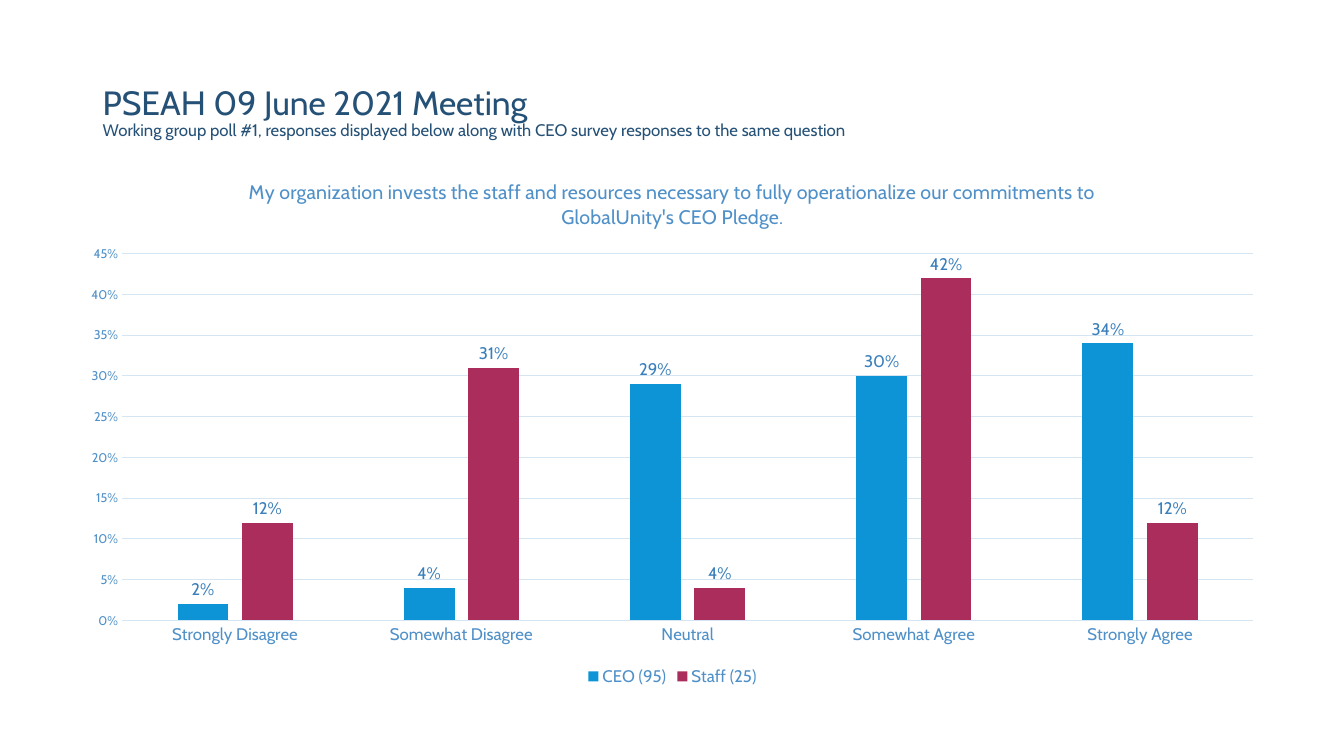
"""Build the poll slide: a heading over a clustered column chart."""
from lxml.etree import Element, SubElement
from pptx import Presentation
from pptx.chart.data import CategoryChartData as Data
from pptx.dml.color import RGBColor as Color
from pptx.enum.chart import XL_CHART_TYPE as Kind
from pptx.enum.chart import XL_LABEL_POSITION as Spot
from pptx.enum.chart import XL_LEGEND_POSITION as Side
from pptx.enum.chart import XL_TICK_MARK as Tick
from pptx.enum.text import MSO_ANCHOR as Anchor
from pptx.oxml.ns import qn
from pptx.util import Pt

PX = 9144
THEME = {
    "face": "Cabin",
    "navy": "255177", "blue": "4F90C8", "label": "3A7FBB", "grid": "D6E5F2",
    "bars": ["0C94D6", "AA2D5C"],
    "head": 24, "title": 14, "body": 12, "base": 10, "tick": 9,
}
CATS = ["Strongly Disagree", "Somewhat Disagree", "Neutral",
        "Somewhat Agree", "Strongly Agree"]
POLL = {
    "CEO (95)": [0.02, 0.04, 0.29, 0.30, 0.34],
    "Staff (25)": [0.12, 0.31, 0.04, 0.42, 0.12],
}
PLOT = {"x": 0.045, "y": 0.178, "w": 0.935, "h": 0.69}


def style(font, size, hue):
    font.name = THEME["face"]
    font.size = Pt(THEME[size])
    font.bold = False
    font.color.rgb = Color.from_string(THEME[hue])


def rule(line):
    line.width = Pt(0.75)
    line.color.rgb = Color.from_string(THEME["grid"])


deck = Presentation()
deck.slide_width, deck.slide_height = 1333 * PX, 750 * PX
slide = deck.slides.add_slide(deck.slide_layouts[6])

box = slide.shapes.add_textbox(92 * PX, 40 * PX, 1150 * PX, 145 * PX)
frame = box.text_frame
frame.word_wrap = True
frame.vertical_anchor = Anchor.MIDDLE
para = frame.paragraphs[0]
para.line_spacing = 0.9
run = para.add_run()
run.text = "PSEAH 09 June 2021 Meeting"
style(run.font, "head", "navy")
para.add_line_break()
run = para.add_run()
run.text = ("Working group poll #1, responses displayed below along with "
            "CEO survey responses to the same question")
style(run.font, "body", "navy")

data = Data(number_format="0%")
data.categories = CATS
for name, vals in POLL.items():
    data.add_series(name, vals)
chart = slide.shapes.add_chart(
    Kind.COLUMN_CLUSTERED, 67 * PX, 158 * PX, 1200 * PX, 527 * PX, data).chart
style(chart.font, "base", "navy")

chart.has_title = True
run = chart.chart_title.text_frame.paragraphs[0].add_run()
run.text = ("My organization invests the staff and resources necessary to fully "
            "operationalize our commitments to GlobalUnity's CEO Pledge.")
style(run.font, "title", "blue")
chart.chart_title.include_in_layout = False

chart.has_legend = True
chart.legend.position = Side.BOTTOM
chart.legend.include_in_layout = False
style(chart.legend.font, "body", "blue")

cat, val = chart.category_axis, chart.value_axis
for axis, size in ((cat, "body"), (val, "tick")):
    axis.major_tick_mark = axis.minor_tick_mark = Tick.NONE
    style(axis.tick_labels.font, size, "blue")
rule(cat.format.line)
val.format.line.fill.background()
rule(val.major_gridlines.format.line)
val.minimum_scale, val.maximum_scale, val.major_unit = 0, 0.45, 0.05
val.tick_labels.number_format = "0%"
val.tick_labels.number_format_is_linked = False

plot = chart.plots[0]
plot.gap_width, plot.overlap = 219, -27
plot.vary_by_categories = False
for bars, hue in zip(plot.series, THEME["bars"]):
    bars.format.fill.solid()
    bars.format.fill.fore_color.rgb = Color.from_string(hue)
    tags = bars.data_labels
    tags.show_value = True
    tags.position = Spot.OUTSIDE_END
    tags.number_format = "0%"
    tags.number_format_is_linked = False
    style(tags.font, "body", "label")

area = chart.element.find(".//" + qn("c:plotArea"))
for old in area.findall(qn("c:layout")):
    area.remove(old)
layout = Element(qn("c:layout"))
area.insert(0, layout)
inner = SubElement(layout, qn("c:manualLayout"))
SubElement(inner, qn("c:layoutTarget")).set("val", "inner")
for key in "xy":
    SubElement(inner, qn(f"c:{key}Mode")).set("val", "edge")
for key, part in PLOT.items():
    SubElement(inner, qn(f"c:{key}")).set("val", str(part))

deck.save("out.pptx")
